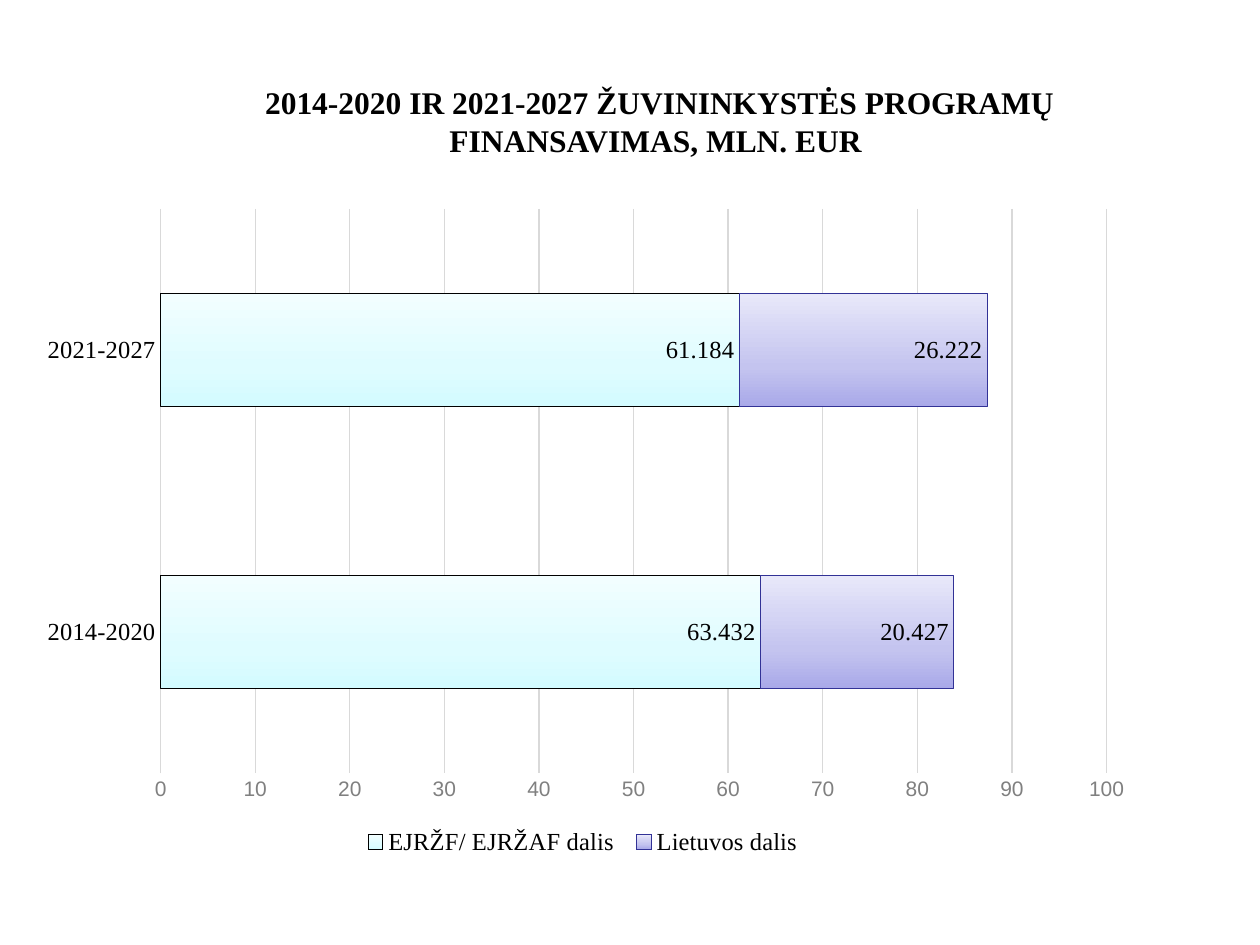
from dataclasses import dataclass

from lxml import etree
from pptx import Presentation
from pptx.chart import data
from pptx.dml import color
from pptx.enum import chart as ch, text
from pptx.oxml import ns
from pptx.util import Inches, Pt


@dataclass(frozen=True)
class Theme:
    serif: str = "Times New Roman"
    sans: str = "Arial"
    ink: str = "000000"
    muted: str = "808080"
    grid: str = "D9D9D9"
    title: int = 18
    label: int = 14
    scale: int = 12
    base: int = 10
    line: float = 0.75
    fills: tuple = (("D3FBFF", "DFFCFF", "F2FEFF"), ("A9A9E9", "C4C4EF", "E8E8FA"))
    edges: tuple = ("000000", "323296")


THEME = Theme()
WIDE, HIGH = Inches(10), Inches(7.5)
CATS = ("2014-2020", "2021-2027")
PARTS = (
    ("EJRŽF/ EJRŽAF dalis ", (63.432, 61.184)),
    ("Lietuvos dalis ", (20.427, 26.222)),
)


def area(left, top, width, height):
    return [int(n) for n in (WIDE * left, HIGH * top, WIDE * width, HIGH * height)]


def style(font, size, face=THEME.serif, tint=THEME.ink, bold=False):
    font.size = Pt(size)
    font.name = face
    font.bold = bold
    font.color.rgb = color.RGBColor.from_string(tint)


def stroke(line, tint):
    line.width = Pt(THEME.line)
    line.color.rgb = color.RGBColor.from_string(tint)


def shade(part, tints):
    grad = etree.Element(ns.qn("a:gradFill"), rotWithShape="1")
    stops = etree.SubElement(grad, ns.qn("a:gsLst"))
    for share, tint in zip((0, 35, 100), tints):
        stop = etree.SubElement(stops, ns.qn("a:gs"), pos=str(share * 1000))
        etree.SubElement(stop, ns.qn("a:srgbClr"), val=tint)
    etree.SubElement(grad, ns.qn("a:lin"), ang=str(270 * 60000), scaled="1")
    part._element.get_or_add_spPr().insert(0, grad)


def title(slide, box):
    frame = slide.shapes.add_textbox(*box).text_frame
    frame.word_wrap = True
    frame.vertical_anchor = text.MSO_ANCHOR.MIDDLE
    para = frame.paragraphs[0]
    para.alignment = text.PP_ALIGN.CENTER
    run = para.add_run()
    run.text = "2014-2020 IR 2021-2027 ŽUVININKYSTĖS PROGRAMŲ FINANSAVIMAS, MLN. EUR "
    style(run.font, THEME.title, bold=True)


def axes(chart):
    cat, val = chart.category_axis, chart.value_axis
    for axis in (cat, val):
        axis.major_tick_mark = axis.minor_tick_mark = ch.XL_TICK_MARK.NONE
    style(cat.tick_labels.font, THEME.label)
    stroke(cat.format.line, THEME.grid)
    style(val.tick_labels.font, THEME.scale, THEME.sans, THEME.muted)
    val.minimum_scale, val.maximum_scale, val.major_unit = 0, 100, 10
    val.format.line.fill.background()
    stroke(val.major_gridlines.format.line, THEME.grid)


def bars(slide, box):
    table = data.CategoryChartData()
    table.categories = CATS
    for name, vals in PARTS:
        table.add_series(name, vals)
    kind = ch.XL_CHART_TYPE.BAR_STACKED
    chart = slide.shapes.add_chart(kind, *box, table).chart
    style(chart.font, THEME.base, THEME.sans)
    chart.has_title = False
    axes(chart)
    chart.has_legend = True
    chart.legend.position = ch.XL_LEGEND_POSITION.BOTTOM
    chart.legend.include_in_layout = False
    style(chart.legend.font, THEME.label)
    plot = chart.plots[0]
    plot.gap_width, plot.overlap, plot.vary_by_categories = 150, 100, False
    for part, tints, edge in zip(plot.series, THEME.fills, THEME.edges):
        stroke(part.format.line, edge)
        shade(part, tints)
        part.invert_if_negative = False
        marks = part.data_labels
        marks.show_value = True
        marks.position = ch.XL_LABEL_POSITION.INSIDE_END
        style(marks.font, THEME.label)


def main():
    deck = Presentation()
    deck.slide_width, deck.slide_height = WIDE, HIGH
    slide = deck.slides.add_slide(deck.slide_layouts[6])
    title(slide, area(0.114, 0.09, 0.819, 0.075))
    bars(slide, area(0.02, 0.207, 0.89, 0.704))
    deck.save("out.pptx")


if __name__ == "__main__":
    main()
